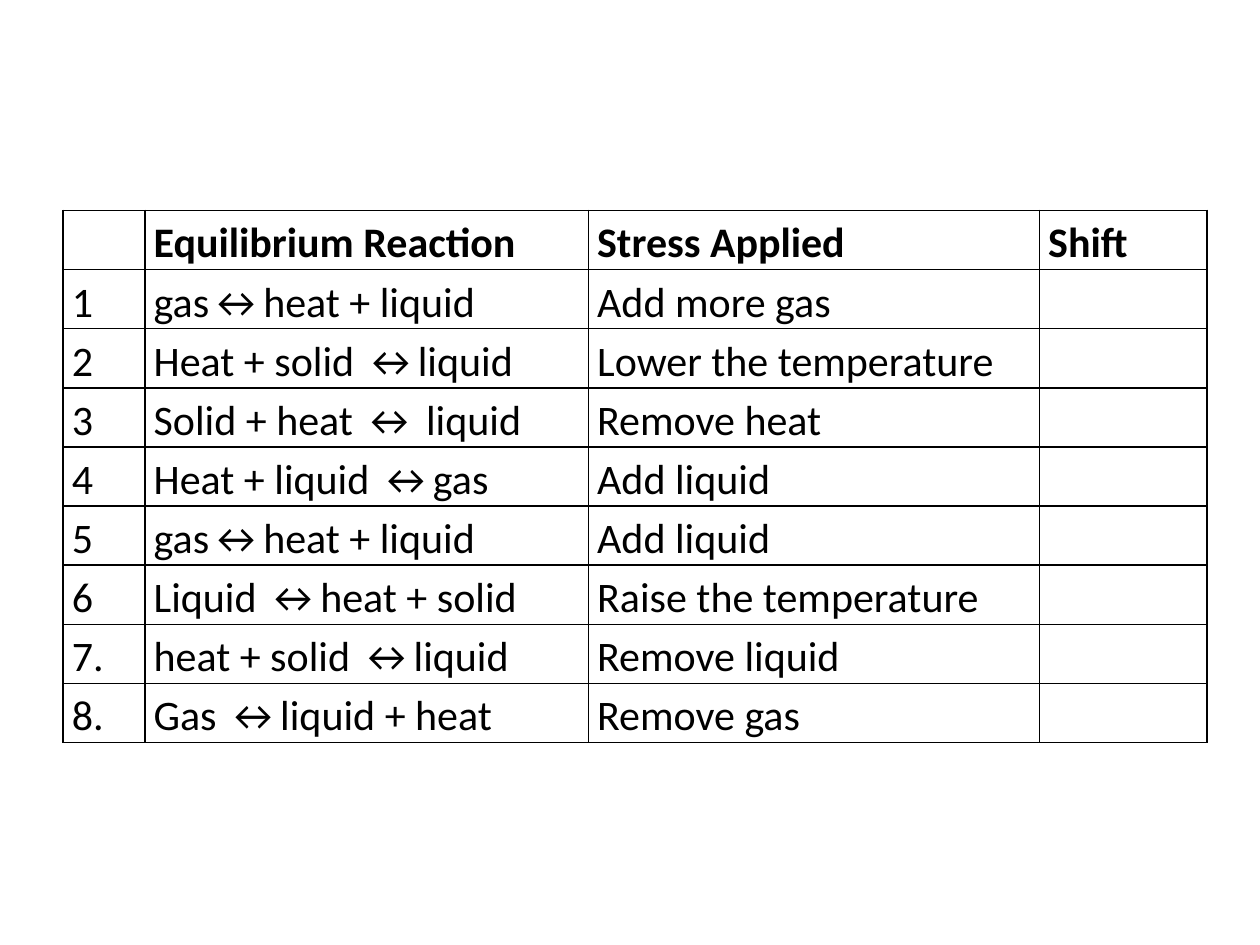
"""Build a worksheet slide on predicting equilibrium shifts."""
from dataclasses import dataclass
from typing import NamedTuple

from lxml.etree import SubElement
from pptx import Presentation
from pptx.dml.color import RGBColor
from pptx.oxml.ns import qn
from pptx.util import Inches, Pt


@dataclass(frozen=True)
class Theme:
    font: str = "Calibri"
    size: Pt = Pt(24)
    ink: RGBColor = RGBColor(0, 0, 0)
    border: Pt = Pt(1)
    line_spacing: float = 1.15


@dataclass(frozen=True)
class Grid:
    left: float = 0.05
    top: float = 0.2227
    columns: tuple[float, ...] = (0.065, 0.352, 0.358, 0.133)
    row: float = 0.0626


class Problem(NamedTuple):
    number: str
    reaction: str
    stress: str
    shift: str = ""


THEME = Theme()
GRID = Grid()
WIDTH, HEIGHT = Inches(10), Inches(7.5)
CELL_FORMAT = {
    "margin_left": Inches(0.07),
    "margin_right": Inches(0.07),
    "margin_top": 0,
    "margin_bottom": 0,
}
HEADING = Problem("", "Equilibrium Reaction", "Stress Applied", "Shift")
PROBLEMS = (
    Problem("1", "gas↔heat + liquid", "Add more gas"),
    Problem("2", "Heat + solid ↔liquid", "Lower the temperature"),
    Problem("3", "Solid + heat ↔ liquid", "Remove heat"),
    Problem("4", "Heat + liquid ↔gas", "Add liquid"),
    Problem("5", "gas↔heat + liquid", "Add liquid"),
    Problem("6", "Liquid ↔heat + solid", "Raise the temperature"),
    Problem("7.", "heat + solid ↔liquid", "Remove liquid"),
    Problem("8.", "Gas ↔liquid + heat", "Remove gas"),
)


def draw_borders(cell) -> None:
    properties = cell._tc.get_or_add_tcPr()
    for position, side in enumerate(("lnL", "lnR", "lnT", "lnB")):
        border = SubElement(properties, qn(f"a:{side}"), w=str(THEME.border))
        fill = SubElement(border, qn("a:solidFill"))
        SubElement(fill, qn("a:srgbClr"), val=str(THEME.ink))
        properties.insert(position, border)


def write_cell(cell, wording: str, bold: bool) -> None:
    for attribute, value in CELL_FORMAT.items():
        setattr(cell, attribute, value)
    cell.fill.background()
    draw_borders(cell)
    if not wording:
        return
    paragraph = cell.text_frame.paragraphs[0]
    paragraph.line_spacing = THEME.line_spacing
    run = paragraph.add_run()
    run.text = wording
    font_format = {"name": THEME.font, "size": THEME.size, "bold": bold}
    for attribute, value in font_format.items():
        setattr(run.font, attribute, value)
    run.font.color.rgb = THEME.ink


def draw_worksheet(slide, entries: tuple[Problem, ...]) -> None:
    worksheet = slide.shapes.add_table(
        len(entries), len(GRID.columns),
        int(GRID.left * WIDTH), int(GRID.top * HEIGHT),
        int(sum(GRID.columns) * WIDTH), int(len(entries) * GRID.row * HEIGHT),
    ).table
    worksheet.horz_banding = False
    for column, share in zip(worksheet.columns, GRID.columns):
        column.width = int(share * WIDTH)
    for index, (row, entry) in enumerate(zip(worksheet.rows, entries)):
        row.height = int(GRID.row * HEIGHT)
        for cell, wording in zip(row.cells, entry):
            write_cell(cell, wording, bold=index == 0)


def main() -> None:
    presentation = Presentation()
    presentation.slide_width, presentation.slide_height = WIDTH, HEIGHT
    slide = presentation.slides.add_slide(presentation.slide_layouts[6])
    draw_worksheet(slide, (HEADING, *PROBLEMS))
    presentation.save("out.pptx")


if __name__ == "__main__":
    main()
